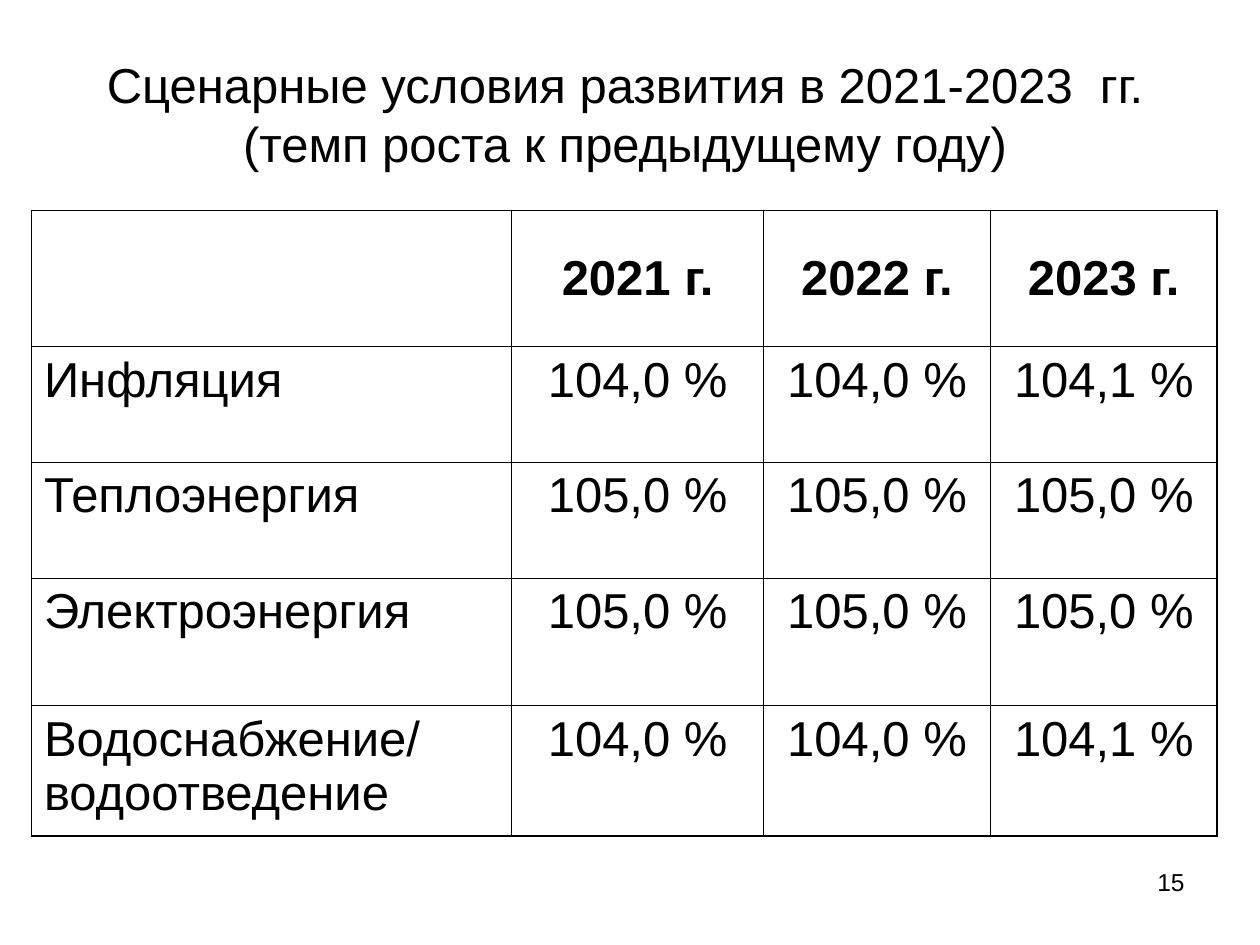
import dataclasses

import lxml.etree
import pptx
import pptx.dml.color
import pptx.enum.text
import pptx.oxml.ns
import pptx.util

Inches = pptx.util.Inches
Pt = pptx.util.Pt
Align = pptx.enum.text.PP_ALIGN
Anchor = pptx.enum.text.MSO_ANCHOR
qn = pptx.oxml.ns.qn


@dataclasses.dataclass(frozen=True)
class Theme:
    font: str = "Arial"
    ink: str = "000000"
    body_size: int = 28
    number_size: int = 14
    border_width: int = 1


theme = Theme()


def write(frame, text, align, size=theme.body_size, bold=False):
    frame.word_wrap = True
    frame.text = text
    for paragraph in frame.paragraphs:
        paragraph.alignment = align
        for run in paragraph.runs:
            run.font.color.rgb = pptx.dml.color.RGBColor.from_string(theme.ink)
            style = {"name": theme.font, "size": Pt(size), "bold": bold}
            for attribute, value in style.items():
                setattr(run.font, attribute, value)


def add_borders(cell):
    properties = cell._tc.get_or_add_tcPr()
    for side in ("lnL", "lnR", "lnT", "lnB"):
        line = lxml.etree.SubElement(
            properties, qn(f"a:{side}"), w=str(Pt(theme.border_width))
        )
        fill = lxml.etree.SubElement(line, qn("a:solidFill"))
        lxml.etree.SubElement(fill, qn("a:srgbClr"), val=theme.ink)


deck = pptx.Presentation()
deck.slide_width, deck.slide_height = Inches(10), Inches(7.5)
slide = deck.slides.add_slide(deck.slide_layouts[6])

page_number = slide.shapes.add_textbox(
    Inches(7.17), Inches(6.83), Inches(2.33), Inches(0.52)
)
write(page_number.text_frame, "15", Align.RIGHT, theme.number_size)

title = slide.shapes.add_textbox(
    Inches(0.5), Inches(0.3), Inches(8.92), Inches(1.2)
)
title.text_frame.vertical_anchor = Anchor.MIDDLE
write(
    title.text_frame,
    "Сценарные условия развития в 2021-2023  гг. (темп роста к предыдущему году)",
    Align.CENTER,
)

scenario = [
    ("", "2021 г.", "2022 г.", "2023 г."),
    ("Инфляция", "104,0 %", "104,0 %", "104,1 %"),
    ("Теплоэнергия", "105,0 %", "105,0 %", "105,0 %"),
    ("Электроэнергия", "105,0 %", "105,0 %", "105,0 %"),
    ("Водоснабжение/\nводоотведение", "104,0 %", "104,0 %", "104,1 %"),
]
column_widths = [3.81, 2, 1.8, 1.8]
row_heights = [1.08, 0.92, 0.92, 1.01, 0.99]

growth = slide.shapes.add_table(
    len(row_heights), len(column_widths),
    Inches(0.25), Inches(1.67),
    Inches(sum(column_widths)), Inches(sum(row_heights)),
).table
for option in ("first_row", "horz_banding"):
    setattr(growth, option, False)
for column, width in zip(growth.columns, column_widths):
    column.width = Inches(width)

for r, (height, values) in enumerate(zip(row_heights, scenario)):
    growth.rows[r].height = Inches(height)
    for c, value in enumerate(values):
        cell = growth.cell(r, c)
        write(
            cell.text_frame, value,
            Align.CENTER if c else Align.LEFT, bold=r == 0,
        )
        cell.vertical_anchor = Anchor.TOP if r else Anchor.MIDDLE
        add_borders(cell)
        cell.fill.background()

deck.save("out.pptx")
